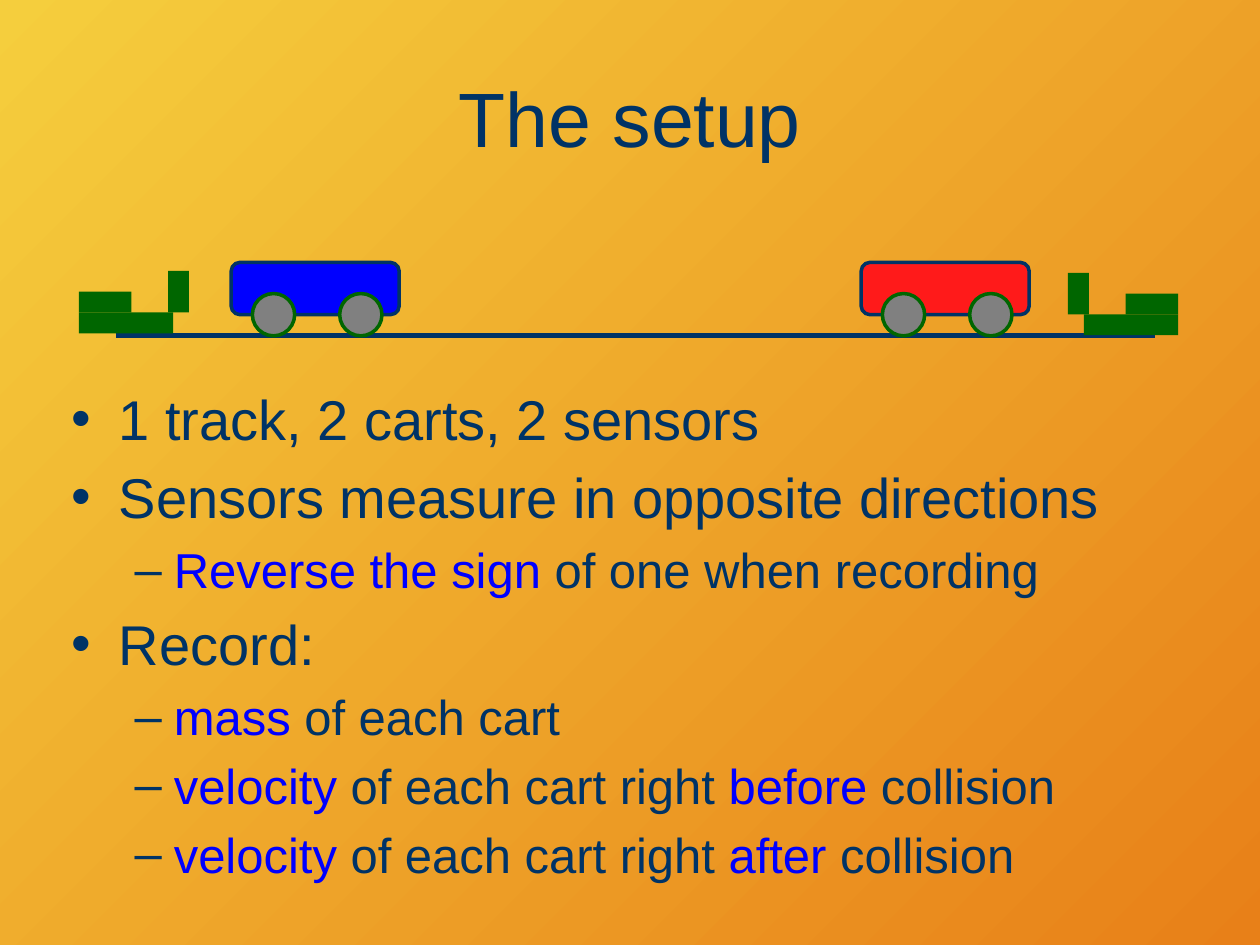
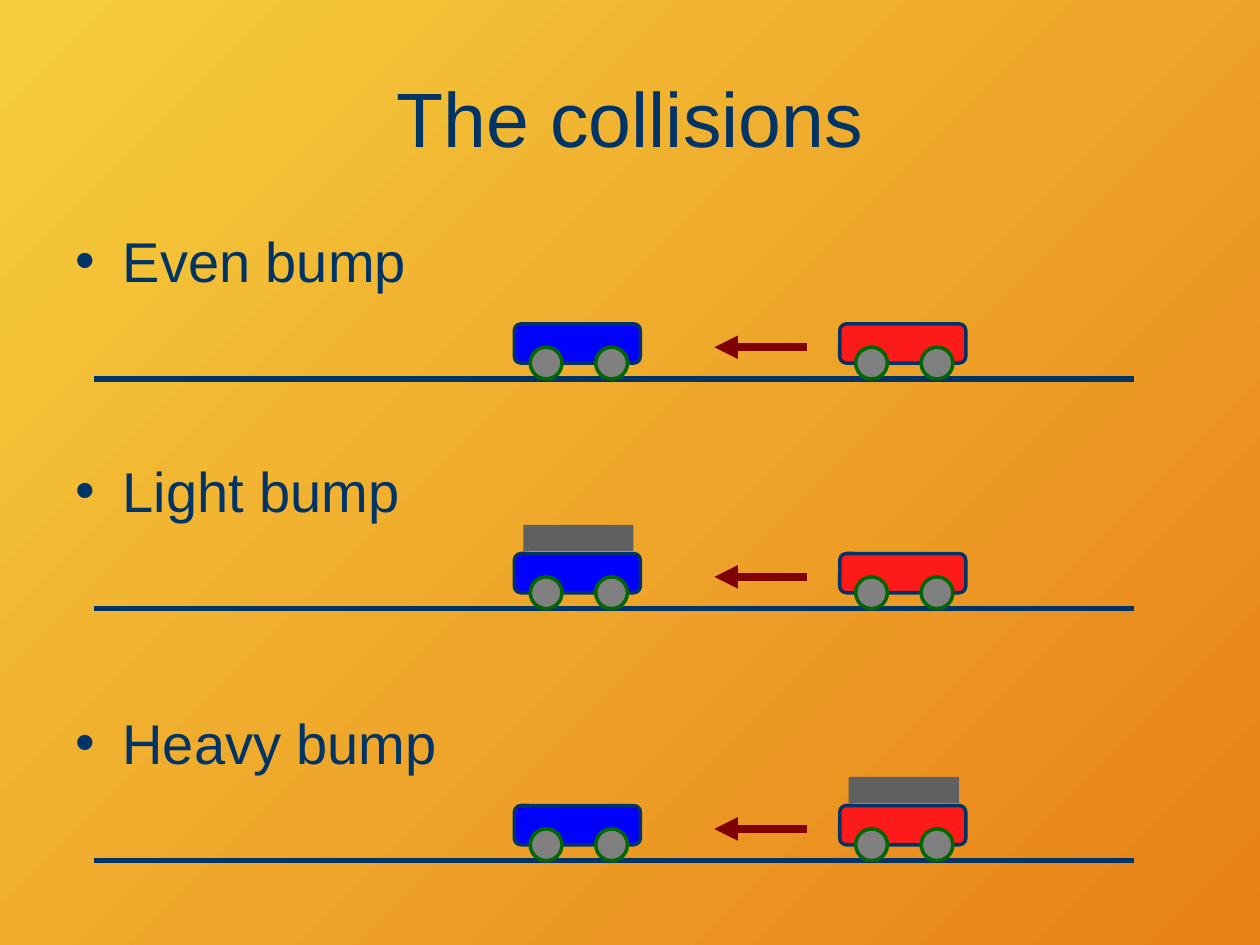
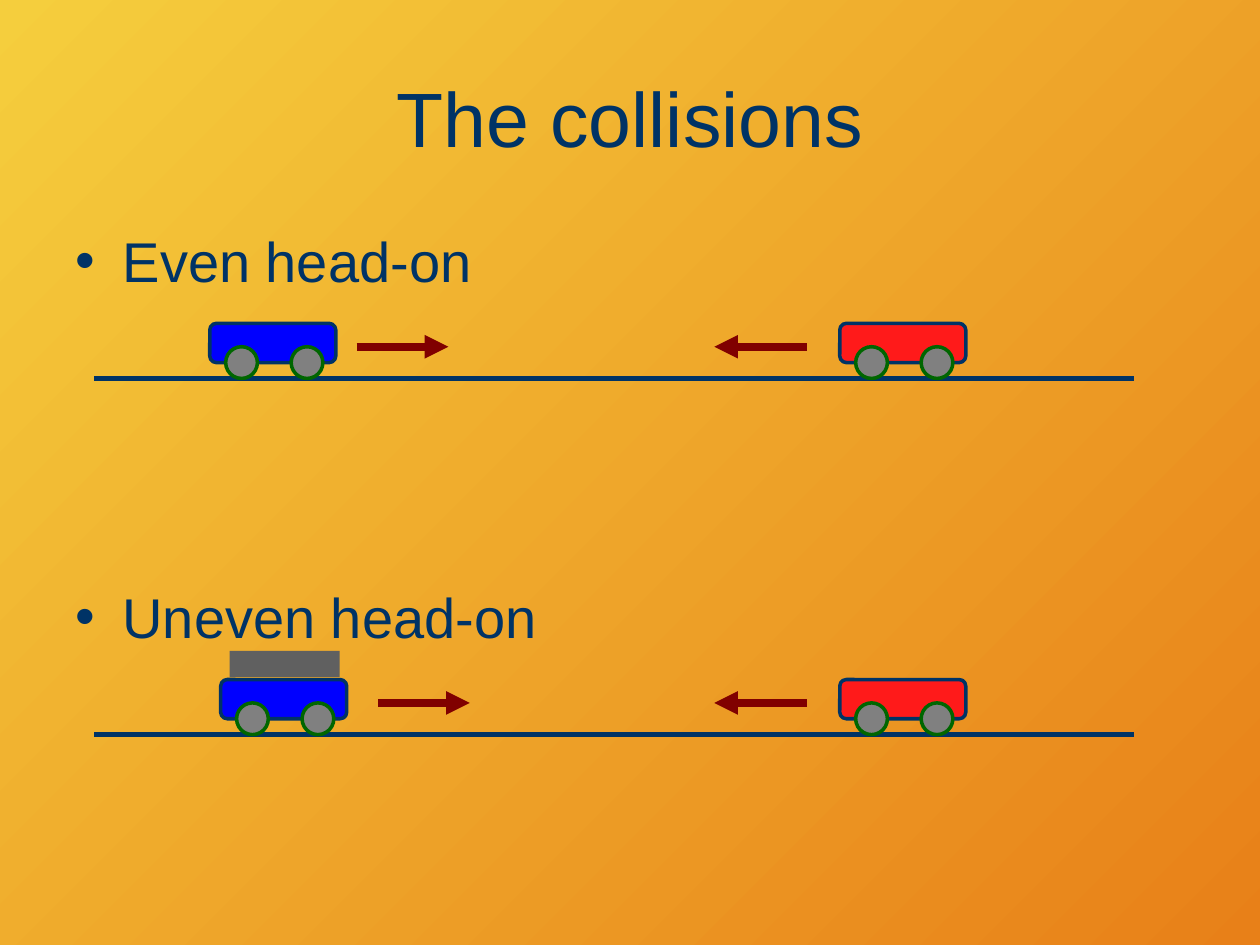
import pptx
import pptx.dml.color
import pptx.enum.shapes
import pptx.enum.text
import pptx.oxml.ns
import pptx.util
from lxml import etree

Cm = pptx.util.Cm
Pt = pptx.util.Pt
RGBColor = pptx.dml.color.RGBColor
PRESET = pptx.enum.shapes.MSO_SHAPE
qn = pptx.oxml.ns.qn

NAVY = RGBColor(0x00, 0x33, 0x66)
BLUE = RGBColor(0x00, 0x00, 0xFF)
RED = RGBColor(0xFF, 0x1A, 0x1A)
GREEN = RGBColor(0x00, 0x66, 0x00)
WHEEL_GREY = RGBColor(0x80, 0x80, 0x80)
LOAD_GREY = RGBColor(0x60, 0x60, 0x60)
MAROON = RGBColor(0x80, 0x00, 0x00)
YELLOW = RGBColor(0xF5, 0xCE, 0x3D)
ORANGE = RGBColor(0xE8, 0x80, 0x18)

# Bullet, left margin, hanging indent and text size of each list level
LEVELS = [("•", Cm(0.95), Cm(-0.95), 32), ("–", Cm(2.06), Cm(-0.79), 28)]


def write_text(frame, text, size=None, level=None, align=None):
    """Add a paragraph; words between asterisks are highlighted."""
    paragraph = frame.add_paragraph() if frame.text else frame.paragraphs[0]
    paragraph.alignment = align
    if level is not None:
        bullet, margin, indent, level_size = LEVELS[level]
        size = size or level_size
        paragraph.level = level
        paragraph.space_before = Pt(size * 0.2)
        properties = paragraph._p.get_or_add_pPr()
        properties.set("marL", str(margin))
        properties.set("indent", str(indent))
        bullet_colour = etree.SubElement(properties, qn("a:buClr"))
        etree.SubElement(bullet_colour, qn("a:srgbClr"), val=str(NAVY))
        etree.SubElement(properties, qn("a:buFont"), typeface="Arial")
        etree.SubElement(properties, qn("a:buChar"), char=bullet)
    for index, words in enumerate(text.split("*")):
        if words:
            run = paragraph.add_run()
            run.text = words
            run.font.name = "Arial"
            run.font.size = Pt(size)
            run.font.color.rgb = BLUE if index % 2 else NAVY


def add_part(group, preset, left, top, width, height, fill, outline=None):
    part = group.shapes.add_shape(preset, Cm(left), Cm(top), Cm(width), Cm(height))
    part.shadow.inherit = False
    part.fill.solid()
    part.fill.fore_color.rgb = fill
    if outline is None:
        part.line.fill.background()
    else:
        part.line.color.rgb = outline
        part.line.width = Pt(2)


# Content: each scene has label, track height, track ends, scale,
# carts (left, colour, loaded) and arrows (from, to)
TRACK = (1.9, 22.86)
LABEL_BOX = (1.27, 4.44, 9.42, 2.08)
LABEL_RISE = 3.2
SETUP_Y = 6.77
BLUE_AT_REST = (10.37, BLUE, False)
RED_CART = (16.93, RED, False)
LEFTWARD = (16.26, 14.4)

setup_notes = [
    (0, "1 track, 2 carts, 2 sensors"),
    (0, "Sensors measure in opposite directions"),
    (1, "*Reverse the sign* of one when recording"),
    (0, "Record:"),
    (1, "*mass* of each cart"),
    (1, "*velocity* of each cart right *before* collision"),
    (1, "*velocity* of each cart right *after* collision"),
]
setup_scenes = [
    (None, SETUP_Y, (2.33, 23.28), 4 / 3,
     [(4.66, BLUE, False), (17.36, RED, False)], []),
]
bump_scenes = [
    (None, 7.64, TRACK, 1, [BLUE_AT_REST, RED_CART], [LEFTWARD]),
    ("Light bump", 12.27, TRACK, 1, [(10.37, BLUE, True), RED_CART], [LEFTWARD]),
    ("Heavy bump", 17.35, TRACK, 1, [BLUE_AT_REST, (16.93, RED, True)], [LEFTWARD]),
]
head_on_scenes = [
    (None, 7.63, TRACK, 1, [(4.23, BLUE, False), RED_CART],
     [LEFTWARD, (7.19, 9.04)]),
    ("Uneven head-on", 14.81, TRACK, 1, [(4.45, BLUE, True), RED_CART],
     [LEFTWARD, (7.62, 9.47)]),
]
lessons = [
    ("The setup", (1.19, 7.62, 22.86, 10.8), setup_notes, setup_scenes),
    ("The collisions", LABEL_BOX, [(0, "Even bump")], bump_scenes),
    ("The collisions", LABEL_BOX, [(0, "Even head-on")], head_on_scenes),
]

# Page size and shared background
prs = pptx.Presentation()
prs.slide_width, prs.slide_height = Cm(25.4), Cm(19.05)
backdrop = prs.slide_master.background.fill
backdrop.gradient()
backdrop.gradient_angle = 315
for stop, colour in zip(backdrop.gradient_stops, (YELLOW, ORANGE)):
    stop.color.rgb = colour

for heading, notes_box, notes, scenes in lessons:
    slide = prs.slides.add_slide(prs.slide_layouts[1])

    # Title and list
    title, body = slide.placeholders
    for holder, box in ((title, (1.27, 0.76, 22.86, 3.18)), (body, notes_box)):
        holder.left, holder.top, holder.width, holder.height = map(Cm, box)
    title.text_frame.vertical_anchor = pptx.enum.text.MSO_ANCHOR.MIDDLE
    write_text(title.text_frame, heading, size=44,
               align=pptx.enum.text.PP_ALIGN.CENTER)
    for level, note in notes:
        write_text(body.text_frame, note, level=level)

    for label, track_y, track, scale, carts, arrows in scenes:
        scene = slide.shapes.add_group_shape()
        if label:
            caption = scene.shapes.add_textbox(
                Cm(1.27), Cm(track_y - LABEL_RISE), Cm(11.38), Cm(2.08))
            caption.text_frame.word_wrap = True
            write_text(caption.text_frame, label, level=0)

        # Track and direction arrows
        strokes = [(track, track_y, NAVY, 3)]
        strokes += [(arrow, track_y - 0.64, MAROON, 4.5) for arrow in arrows]
        for (start, end), y, colour, weight in strokes:
            stroke = scene.shapes.add_connector(
                pptx.enum.shapes.MSO_CONNECTOR.STRAIGHT,
                Cm(start), Cm(y), Cm(end), Cm(y))
            stroke.line.color.rgb = colour
            stroke.line.width = Pt(weight)
            if colour == MAROON:
                etree.SubElement(stroke.line._get_or_add_ln(),
                                 qn("a:tailEnd"), type="triangle")
            etree.SubElement(stroke._element.spPr, qn("a:effectLst"))

        # Carts with wheels and extra load
        for left, colour, loaded in carts:
            add_part(scene, PRESET.ROUNDED_RECTANGLE, left, track_y - 1.11 * scale,
                     2.54 * scale, 0.79 * scale, colour, NAVY)
            for wheel in (0.32, 1.64):
                add_part(scene, PRESET.OVAL, left + wheel * scale,
                         track_y - 0.64 * scale, 0.64 * scale, 0.64 * scale,
                         WHEEL_GREY, GREEN)
            if loaded:
                add_part(scene, PRESET.RECTANGLE, left + 0.18, track_y - 1.69,
                         2.22, 0.53, LOAD_GREY)

# Sensors at both ends of the setup track, the right one mirrored
MIRROR_SUM = 25.34
sensors = prs.slides[0].shapes.add_group_shape()
for left, rise, width, height in ((1.59, 0.47, 1.9, 0.42),
                                  (1.59, 0.89, 1.06, 0.42),
                                  (3.39, 1.31, 0.42, 0.84)):
    top = SETUP_Y - rise
    add_part(sensors, PRESET.RECTANGLE, left, top, width, height, GREEN)
    add_part(sensors, PRESET.RECTANGLE, MIRROR_SUM - left - width, top + 0.04,
             width, height, GREEN)

prs.save("out.pptx")
